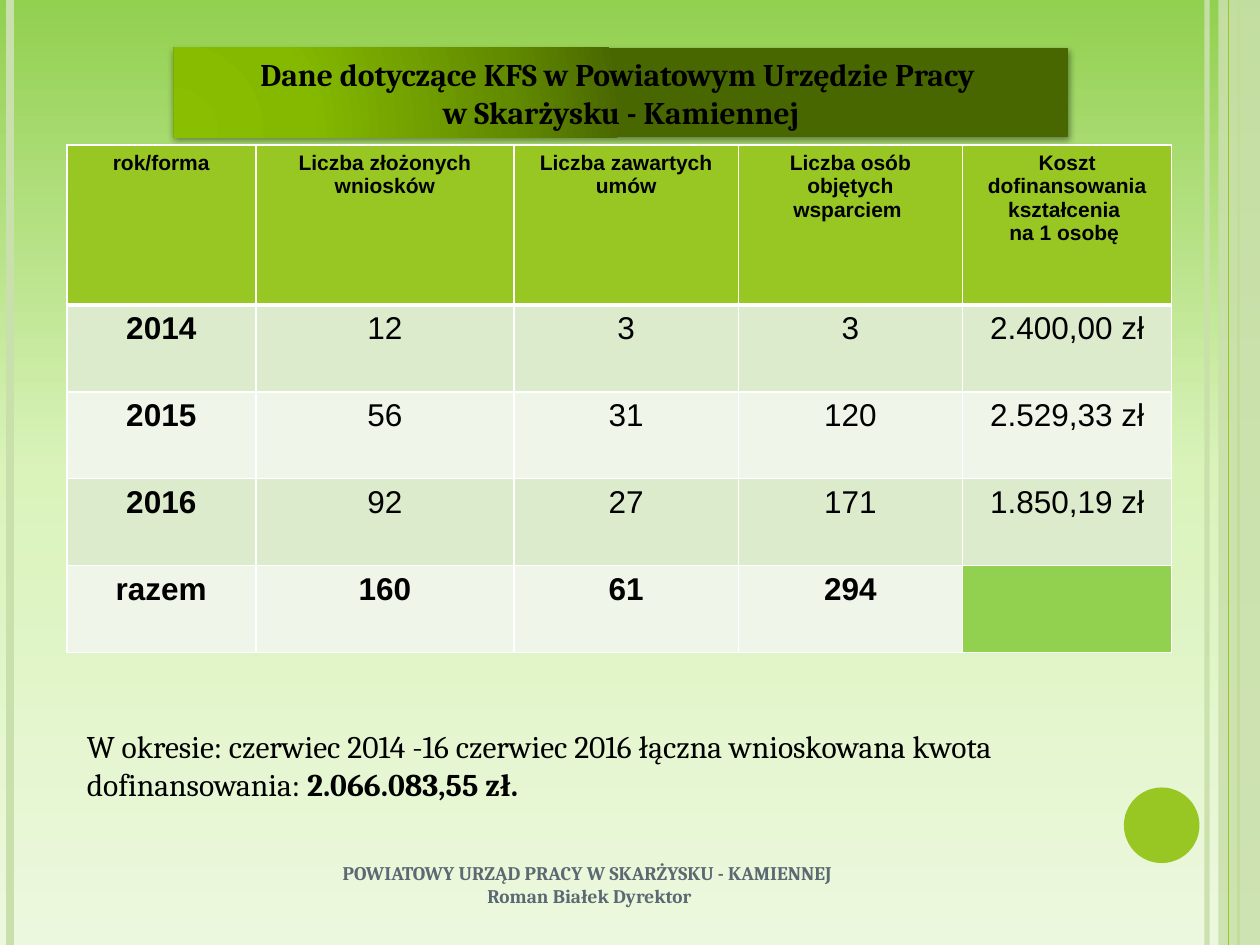
from dataclasses import dataclass

from pptx import Presentation
from pptx.dml.color import RGBColor
from pptx.enum.shapes import MSO_CONNECTOR, MSO_SHAPE
from pptx.enum.text import MSO_ANCHOR, MSO_AUTO_SIZE, PP_ALIGN
from pptx.oxml import parse_xml
from pptx.oxml.ns import nsdecls, qn
from pptx.util import Inches, Pt

STRAIGHT = MSO_CONNECTOR.STRAIGHT
RECTANGLE, OVAL = MSO_SHAPE.RECTANGLE, MSO_SHAPE.OVAL
LEFT, CENTER = PP_ALIGN.LEFT, PP_ALIGN.CENTER
TOP, MIDDLE = MSO_ANCHOR.TOP, MSO_ANCHOR.MIDDLE
FIT_SHAPE = MSO_AUTO_SIZE.SHAPE_TO_FIT_TEXT


@dataclass(frozen=True)
class Theme:
    serif: str = "Cambria"
    sans: str = "Arial"
    body_size: int = 18
    header_size: int = 12
    footer_size: int = 11
    text: str = "000000"
    footer: str = "5B6973"
    accent: str = "98C723"
    pale: str = "CAE0AC"
    blank_cell: str = "92D050"
    border: str = "FFFFFF"
    bands: tuple = ("DDEBCD", "EFF5E8")
    background: tuple = ((0, "92D050"), (50, "DAF3BB"), (100, "ECF8DE"))
    banner: tuple = ((0, "89BF00"), (30, "84B900"), (75, "638B00"), (100, "496700"))


THEME = Theme()
SLIDE_WIDTH, SLIDE_HEIGHT = 10, 7.5

# Side stripes: x position, colour, width in points, opacity in percent
STRIPES = [
    (9.58, THEME.pale, 3, 93),
    (0.08, THEME.pale, 4.5, 100),
    (9.83, THEME.accent, 1.5, 100),
]

COLUMN_WIDTHS = [1.5, 2.05, 1.78, 1.78, 1.66]
ROW_HEIGHTS = [1.27] + [0.69] * 4
ROWS = [
    ["rok/forma", "Liczba złożonych wniosków", "Liczba zawartych umów",
     "Liczba osób objętych wsparciem ",
     "Koszt dofinansowania kształcenia \nna 1 osobę "],
    ["2014", "12", "3", "3", "2.400,00 zł"],
    ["2015", "56", "31", "120", "2.529,33 zł"],
    ["2016", "92", "27", "171", "1.850,19 zł"],
    ["razem", "160", "61", "294", ""],
]


def drawing_xml(tag, attributes="", content=""):
    return parse_xml(f'<a:{tag} {nsdecls("a")} {attributes}>{content}</a:{tag}>')


def color_xml(color, opacity=100):
    return f'<a:srgbClr val="{color}"><a:alpha val="{opacity * 1000}"/></a:srgbClr>'


def set_gradient(element, stops, direction):
    """Give an element's gradient fill its own stops and direction."""
    gradient = element.find(".//" + qn("a:gradFill"))
    for child in list(gradient):
        gradient.remove(child)
    content = "".join(
        f'<a:gs pos="{position * 1000}">{color_xml(color)}</a:gs>'
        for position, color in stops
    )
    gradient.append(drawing_xml("gsLst", content=content))
    gradient.append(direction)


def set_opacity(element, opacity):
    if opacity < 100:
        color = element.find(".//" + qn("a:srgbClr"))
        color.append(drawing_xml("alpha", f'val="{opacity * 1000}"'))


def write_text(frame, paragraphs, formats, align=CENTER):
    """Write paragraphs, each a list of (text, bold) spans."""
    for index, spans in enumerate(paragraphs):
        para = frame.paragraphs[0] if index == 0 else frame.add_paragraph()
        para.alignment = align
        for text, bold in spans:
            span = para.add_run()
            span.text = text
            span.font.color.rgb = RGBColor.from_string(formats["color"])
            for name, value in {"name": formats["name"],
                                "size": Pt(formats["size"]), "bold": bold}.items():
                setattr(span.font, name, value)


def add_stripe(page, x, color, width, opacity=100):
    line = page.shapes.add_connector(
        STRAIGHT, Inches(x), Inches(0), Inches(x), Inches(SLIDE_HEIGHT))
    line.line.color.rgb = RGBColor.from_string(color)
    line.line.width = Pt(width)
    properties = line._element.spPr
    set_opacity(properties, opacity)
    properties.append(drawing_xml("effectLst"))


def add_plain_shape(page, kind, place, color, opacity=100):
    shape = page.shapes.add_shape(kind, *map(Inches, place))
    shape.shadow.inherit = False
    shape.line.fill.background()
    shape.fill.solid()
    shape.fill.fore_color.rgb = RGBColor.from_string(color)
    set_opacity(shape._element.spPr, opacity)
    return shape


def add_banner(page, place, paragraphs, formats):
    banner = add_plain_shape(page, RECTANGLE, place, THEME.accent)
    banner.fill.gradient()
    properties = banner._element.spPr
    focus = '<a:fillToRect l="5000" t="100000" r="120000" b="10000"/>'
    set_gradient(properties, THEME.banner, drawing_xml("path", 'path="circle"', focus))
    properties.find(qn("a:effectLst")).append(drawing_xml(
        "outerShdw",
        f'blurRad="{Pt(4)}" dist="{Pt(1.6)}" dir="5400000" rotWithShape="0"',
        color_xml("000000", 42)))
    banner.text_frame.word_wrap = False
    banner.text_frame.auto_size = FIT_SHAPE
    write_text(banner.text_frame, paragraphs, formats)


def add_text(page, place, paragraphs, formats, align=CENTER, anchor=TOP):
    box = page.shapes.add_textbox(*map(Inches, place))
    box.text_frame.word_wrap = True
    box.text_frame.vertical_anchor = anchor
    write_text(box.text_frame, paragraphs, formats, align)


def set_borders(cell, widths):
    properties = cell._tc.get_or_add_tcPr()
    for index, (side, width) in enumerate(widths.items()):
        fill = f"<a:solidFill>{color_xml(THEME.border)}</a:solidFill>"
        properties.insert(index, drawing_xml(f"ln{side}", f'w="{Pt(width)}"', fill))


def cell_color(row, text):
    if not text:
        return THEME.blank_cell
    return THEME.accent if row == 0 else THEME.bands[(row - 1) % 2]


def add_data_table(page, place):
    table = page.shapes.add_table(
        len(ROWS), len(COLUMN_WIDTHS), *map(Inches, place)).table
    for column, width in zip(table.columns, COLUMN_WIDTHS):
        column.width = Inches(width)
    for row, height in zip(table.rows, ROW_HEIGHTS):
        row.height = Inches(height)

    last_row = len(ROWS) - 1
    for r, values in enumerate(ROWS):
        size = THEME.header_size if r == 0 else THEME.body_size
        formats = {"name": THEME.sans, "size": size, "color": THEME.text}
        # The rule under the header is heavier than the others
        widths = {"L": 1, "R": 1, "T": 3 if r == 1 else 1, "B": 3 if r == 0 else 1}
        for c, text in enumerate(values):
            cell = table.cell(r, c)
            cell.fill.solid()
            cell.fill.fore_color.rgb = RGBColor.from_string(cell_color(r, text))
            set_borders(cell, widths)
            if text:
                bold = r in (0, last_row) or c == 0
                lines = [[(line, bold)] for line in text.split("\n")]
                write_text(cell.text_frame, lines, formats)


def main():
    deck = Presentation()
    deck.slide_width, deck.slide_height = Inches(SLIDE_WIDTH), Inches(SLIDE_HEIGHT)
    page = deck.slides.add_slide(deck.slide_layouts[6])
    body = {"name": THEME.serif, "size": THEME.body_size, "color": THEME.text}
    footer = {"name": THEME.serif, "size": THEME.footer_size, "color": THEME.footer}

    # Background and side decoration
    page.background.fill.gradient()
    set_gradient(page._element, THEME.background,
                 drawing_xml("lin", 'ang="5400000" scaled="0"'))
    for stripe in STRIPES:
        add_stripe(page, *stripe)
    add_plain_shape(page, RECTANGLE, (9.67, 0, 0.33, SLIDE_HEIGHT), THEME.pale, 87)
    add_stripe(page, 9.75, THEME.accent, 0.75)
    add_plain_shape(page, OVAL, (8.92, 6.25, 0.6, 0.6), THEME.accent)

    # Title banner and table
    add_banner(page, (1.38, 0.38, 7.1, 0.71), [
        [("Dane dotyczące KFS w Powiatowym Urzędzie Pracy ", True)],
        [("w Skarżysku - Kamiennej", True)],
    ], body)
    add_data_table(page, (0.53, 1.15, sum(COLUMN_WIDTHS), sum(ROW_HEIGHTS)))

    # Summary and footer
    add_text(page, (0.59, 5.72, 8.71, 0.71), [[
        ("W okresie: czerwiec 2014 -16 czerwiec 2016 łączna wnioskowana kwota "
         "dofinansowania: ", False),
        ("2.066.083,55 zł.", True),
    ]], body, align=LEFT)
    add_text(page, (0.43, 6.82, 8.5, 0.4), [
        [("POWIATOWY URZĄD PRACY W SKARŻYSKU - KAMIENNEJ ", True)],
        [("Roman Białek Dyrektor", True)],
    ], footer, anchor=MIDDLE)

    deck.save("out.pptx")


if __name__ == "__main__":
    main()
